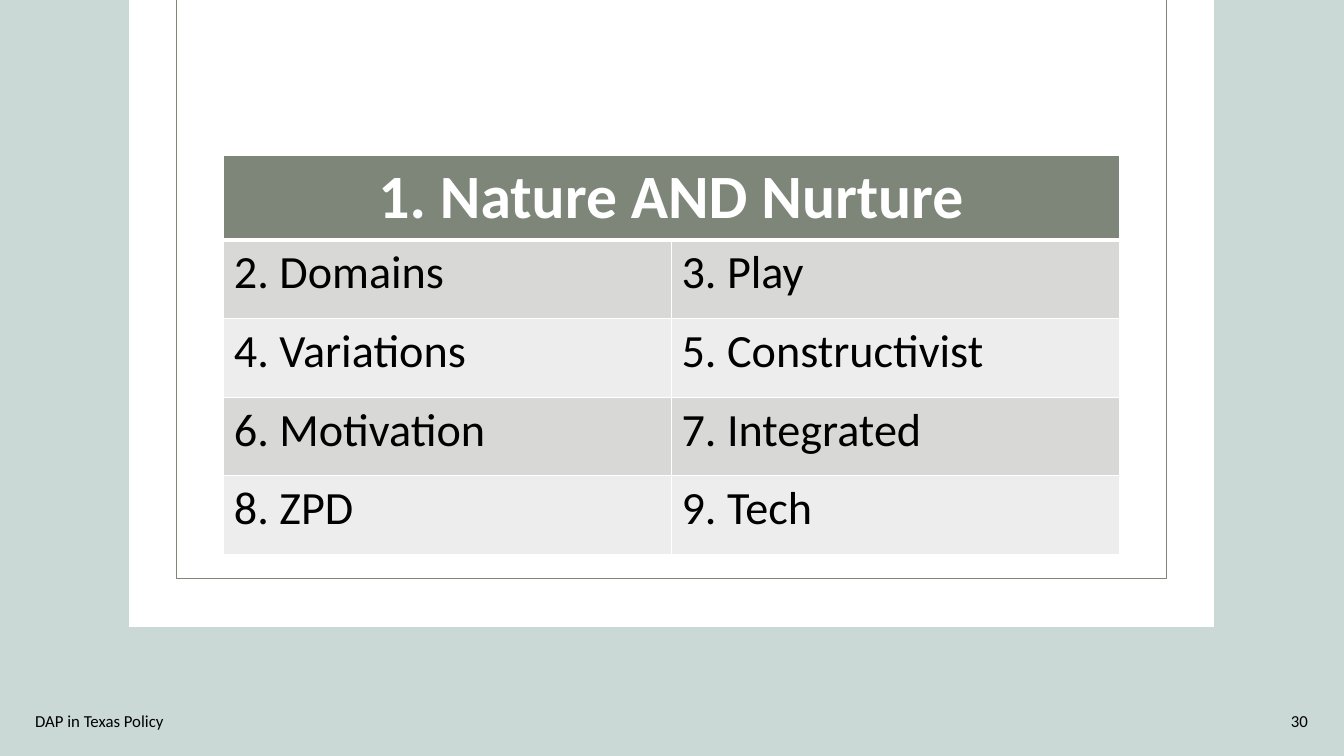
from lxml import etree
from pptx import Presentation
from pptx.dml.color import RGBColor
from pptx.enum.shapes import MSO_SHAPE
from pptx.enum.text import MSO_ANCHOR, PP_ALIGN
from pptx.oxml.ns import qn
from pptx.util import Pt

PX = 9144
FONT = "Calibri"
WHITE, BLACK, SAGE, MIST = "FFFFFF", "000000", "7E8679", "CAD8D6"
BANDS = ("D8D9D7", "ECEDEC")
HEADING = "1. Nature AND Nurture"
TOPICS = [
    ("2. Domains", "3. Play"),
    ("4. Variations", "5. Constructivist"),
    ("6. Motivation", "7. Integrated"),
    ("8. ZPD", "9. Tech"),
]


def px(*lengths):
    """Turn whole pixels, 100 to the inch, into EMU."""
    return [length * PX for length in lengths]


def paint(target, color):
    """Give a fill a solid colour."""
    target.solid()
    target.fore_color.rgb = RGBColor.from_string(color)


def write(para, text, size, color, align=PP_ALIGN.LEFT, bold=False):
    """Put styled text in a paragraph."""
    para.text = text
    para.alignment = align
    font = para.font
    font.name, font.size, font.bold = FONT, Pt(size), bold
    paint(font.fill, color)


def add_rect(page, box):
    """Add a plain rectangle without shadow."""
    rect = page.shapes.add_shape(MSO_SHAPE.RECTANGLE, *px(*box))
    rect.shadow.inherit = False
    return rect


def add_card(page, box):
    """Draw the white card and the thin frame inset within it."""
    left, top, width, height = box
    card = add_rect(page, box)
    paint(card.fill, WHITE)
    card.line.fill.background()
    inset = 47
    frame = add_rect(page, (left + inset, top - 1, width - 2 * inset, height - inset))
    frame.fill.background()
    paint(frame.line.fill, SAGE)
    frame.line.width = Pt(1)


def add_borders(cell, bottom=1):
    """Edge a cell with white lines, the bottom one as wide as asked."""
    properties = cell._tc.get_or_add_tcPr()
    for side, points in (("L", 1), ("R", 1), ("T", 1), ("B", bottom)):
        line = etree.SubElement(properties, qn(f"a:ln{side}"), w=str(Pt(points)))
        fill = etree.SubElement(line, qn("a:solidFill"))
        etree.SubElement(fill, qn("a:srgbClr"), val=WHITE)


def add_topics(page, box):
    """Build the table: a merged heading above banded pairs of topics."""
    left, top, width, height = box
    heading_height = 84
    row_height = (height - heading_height) // len(TOPICS)
    table = page.shapes.add_table(len(TOPICS) + 1, 2, *px(*box)).table
    for column in table.columns:
        column.width = width // 2 * PX
    for row in table.rows:
        row.height = row_height * PX
    table.rows[0].height = heading_height * PX

    heading = table.cell(0, 0)
    heading.merge(table.cell(0, 1))
    write(heading.text_frame.paragraphs[0], HEADING, 44, WHITE, PP_ALIGN.CENTER, True)
    for cell in table.rows[0].cells:
        add_borders(cell, bottom=3)
        paint(cell.fill, SAGE)

    for index, topics in enumerate(TOPICS):
        for column, topic in enumerate(topics):
            cell = table.cell(index + 1, column)
            add_borders(cell)
            paint(cell.fill, BANDS[index % 2])
            write(cell.text_frame.paragraphs[0], topic, 33, BLACK)


def add_label(page, box, text, align):
    """Write one small line of footer text."""
    frame = page.shapes.add_textbox(*px(*box)).text_frame
    frame.word_wrap = True
    frame.vertical_anchor = MSO_ANCHOR.MIDDLE
    write(frame.paragraphs[0], text, 12, BLACK, align)


def add_footer(page, box):
    """Set the deck title at the left and the page number at the right."""
    left, top, width, height = box
    title_width, number_width = 450, 300
    add_label(page, (left, top, title_width, height), "DAP in Texas Policy", PP_ALIGN.LEFT)
    number_left = left + width - number_width
    add_label(page, (number_left, top, number_width, height), "30", PP_ALIGN.RIGHT)


def main():
    """Build the one-slide deck and save it."""
    deck = Presentation()
    deck.slide_width, deck.slide_height = px(1333, 750)
    page = deck.slides.add_slide(deck.slide_layouts[6])
    paint(page.background.fill, MIST)
    add_card(page, (128, 0, 1076, 622))
    add_footer(page, (25, 695, 1282, 40))
    add_topics(page, (222, 154, 888, 396))
    deck.save("out.pptx")


if __name__ == "__main__":
    main()
